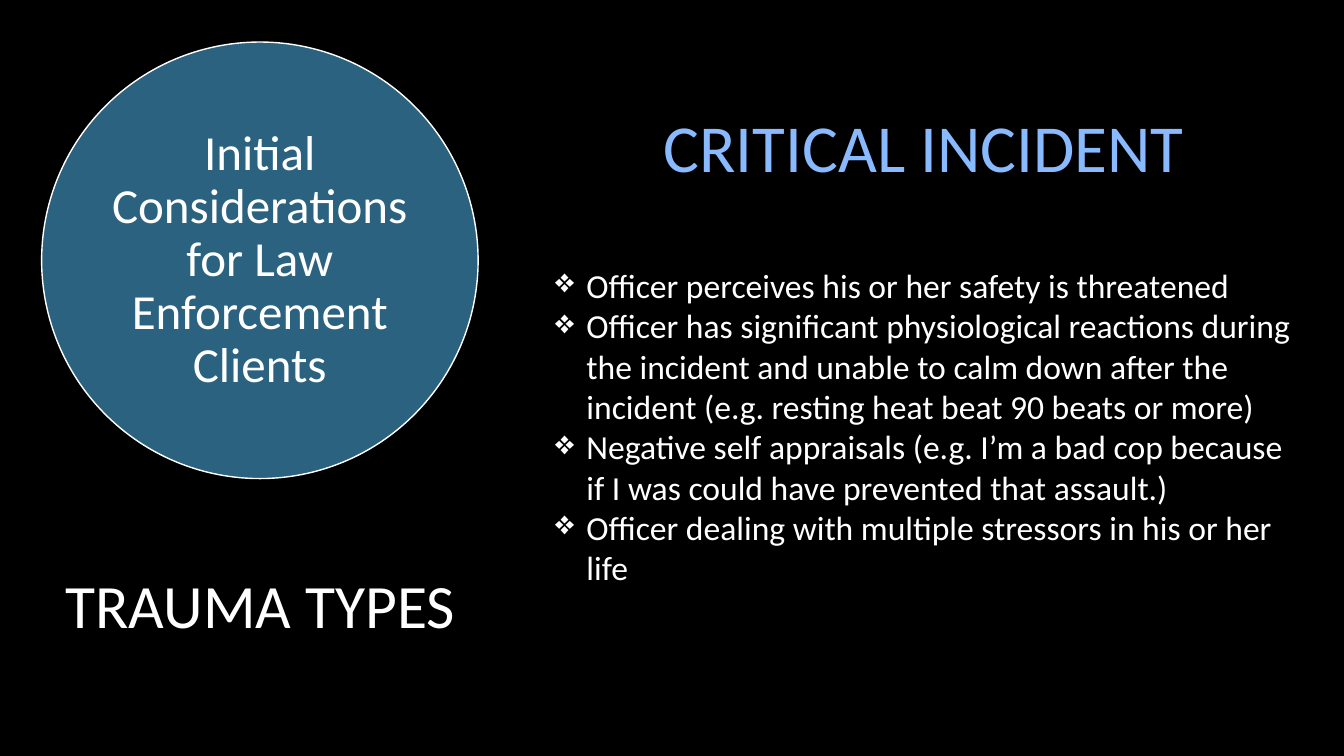
from lxml.etree import SubElement
from pptx import Presentation
from pptx.dml.color import RGBColor
from pptx.enum.shapes import MSO_SHAPE
from pptx.enum.text import MSO_ANCHOR as Anchor, PP_ALIGN as Align
from pptx.oxml.ns import qn
from pptx.util import Cm, Pt

BLACK = RGBColor(0x00, 0x00, 0x00)
WHITE = RGBColor(0xFF, 0xFF, 0xFF)
SKY = RGBColor(0x56, 0xC5, 0xFF)
PERIWINKLE = RGBColor(0x89, 0xBA, 0xFF)
FONT = "Calibri"
SIGNS = [
    "Officer perceives his or her safety is threatened",
    "Officer has significant physiological reactions during the incident and "
    "unable to calm down after the incident (e.g. resting heat beat 90 beats or more)",
    "Negative self appraisals (e.g. I’m a bad cop because if I was could have "
    "prevented that assault.)",
    "Officer dealing with multiple stressors in his or her life",
]


def add_text(paragraph, text, size, color=WHITE, align=Align.CENTER, spacing=None):
    """Add one formatted run to a paragraph."""
    paragraph.alignment = align
    paragraph.line_spacing = spacing
    run = paragraph.add_run()
    run.text = text
    run.font.name = FONT
    run.font.size = Pt(size)
    run.font.color.rgb = color


def add_frame(slide, left, top, width, height, anchor=Anchor.TOP):
    """Add a wrapping text box and return its text frame."""
    box = slide.shapes.add_textbox(Cm(left), Cm(top), Cm(width), Cm(height))
    frame = box.text_frame
    frame.word_wrap = True
    frame.vertical_anchor = anchor
    return frame


def add_topic_circle(slide, left, top, diameter, text):
    """Add the half-transparent circle that names the topic."""
    circle = slide.shapes.add_shape(
        MSO_SHAPE.OVAL, Cm(left), Cm(top), Cm(diameter), Cm(diameter))
    circle.shadow.inherit = False
    circle.fill.solid()
    circle.fill.fore_color.rgb = SKY
    tint = circle.fill._xPr.find(qn("a:solidFill"))[0]
    SubElement(tint, qn("a:alpha"), val="50000")
    circle.line.color.rgb = WHITE
    circle.line.width = Pt(1)
    frame = circle.text_frame
    frame.word_wrap = True
    frame.vertical_anchor = Anchor.MIDDLE
    frame.margin_left = frame.margin_right = 0
    frame.margin_top = frame.margin_bottom = 0
    add_text(frame.paragraphs[0], text, 35, spacing=0.9)


def add_bullets(frame, items, size, indent):
    """Fill a text frame with diamond bullets on a hanging indent."""
    for index, item in enumerate(items):
        paragraph = frame.add_paragraph() if index else frame.paragraphs[0]
        properties = paragraph._p.get_or_add_pPr()
        properties.set("marL", str(Cm(indent)))
        properties.set("indent", str(-Cm(indent)))
        SubElement(properties, qn("a:buChar"), char="❖")
        add_text(paragraph, item, size, align=Align.LEFT)


def main():
    """Build the slide on critical incidents."""
    deck = Presentation()
    deck.slide_width, deck.slide_height = Cm(33.87), Cm(19.05)
    slide = deck.slides.add_slide(deck.slide_layouts[6])
    slide.background.fill.solid()
    slide.background.fill.fore_color.rgb = BLACK

    add_topic_circle(slide, 1.05, 1.06, 11,
                     "Initial Considerations for Law Enforcement Clients")
    section = add_frame(slide, 0.64, 13.12, 11.85, 4.45, Anchor.MIDDLE)
    add_text(section.paragraphs[0], "TRAUMA TYPES", 44, spacing=0.9)
    heading = add_frame(slide, 15.24, 2.54, 16.09, 2.31)
    add_text(heading.paragraphs[0], "CRITICAL INCIDENT", 48, PERIWINKLE)
    signs = add_frame(slide, 13.74, 6.55, 19.47, 11.02)
    add_bullets(signs, SIGNS, 24, 0.79)

    deck.save("out.pptx")


if __name__ == "__main__":
    main()
